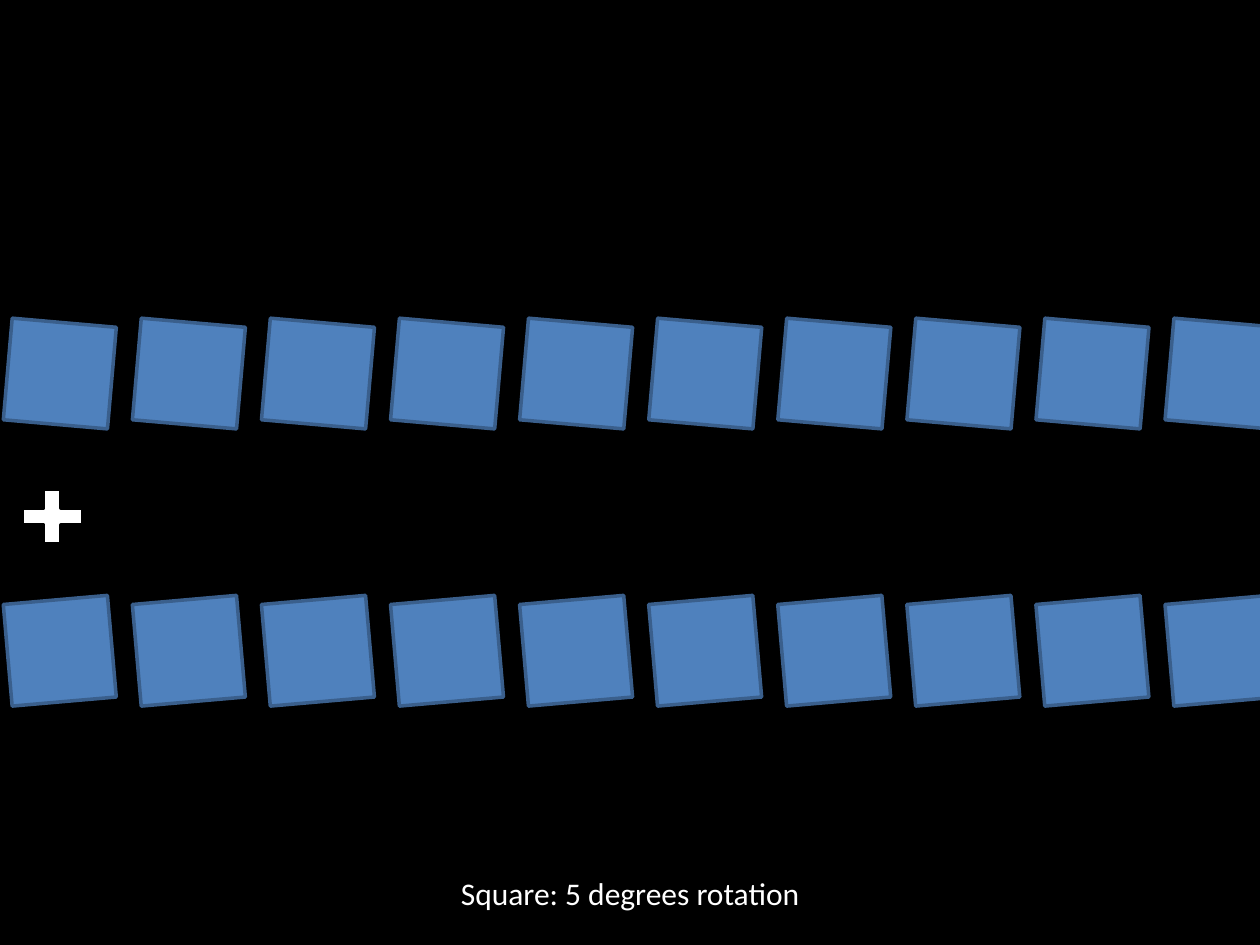
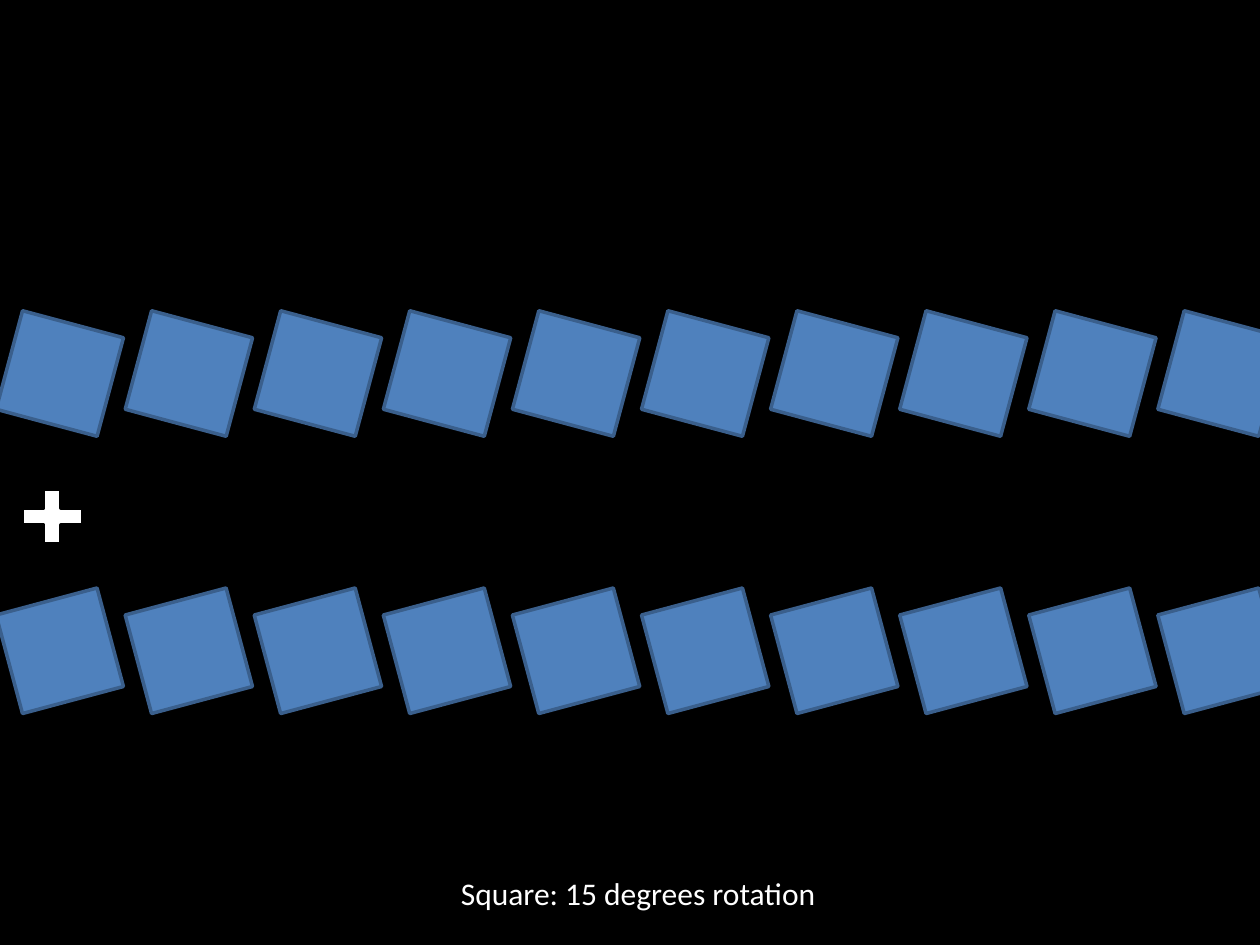
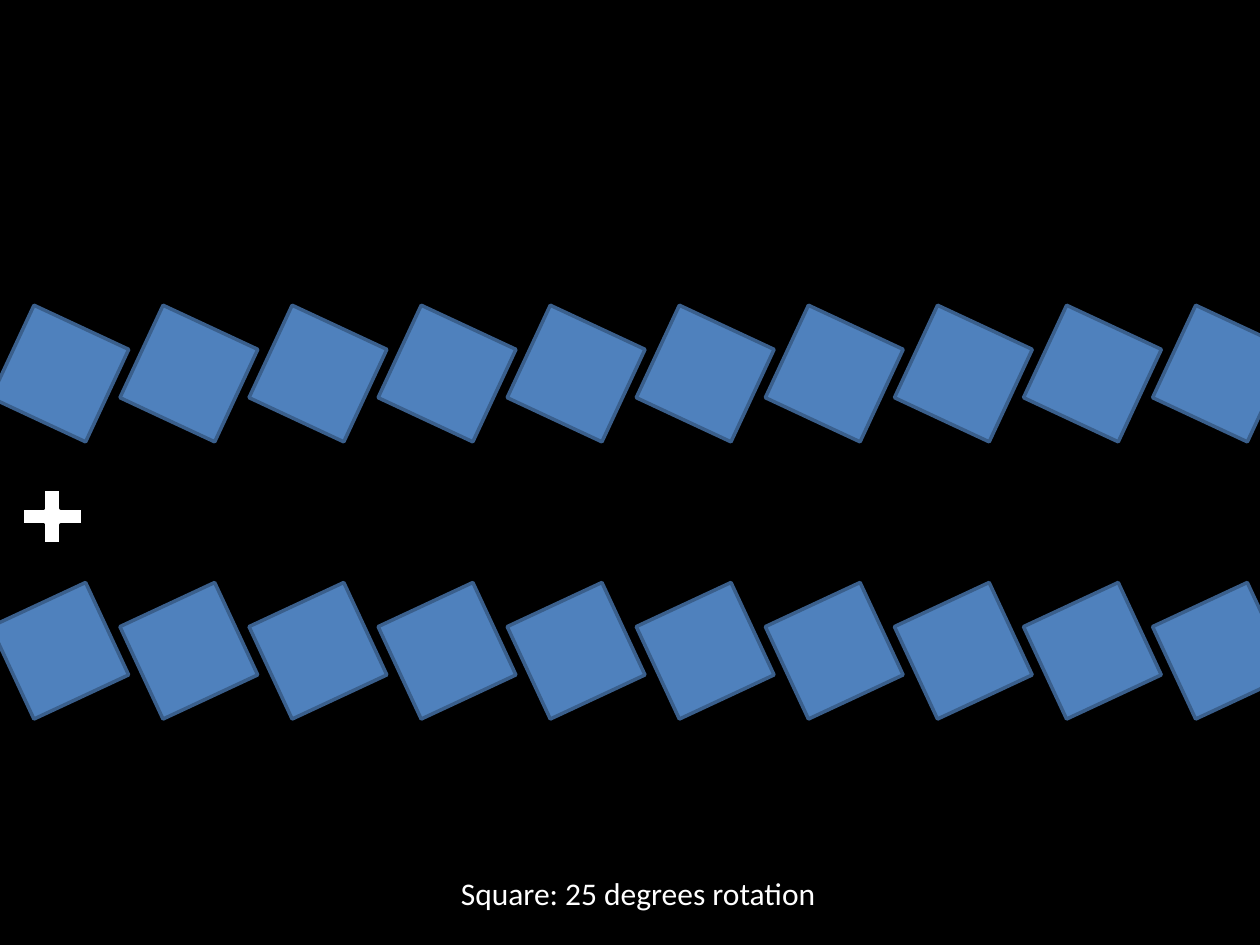
from dataclasses import dataclass

from pptx import Presentation
from pptx.dml.color import RGBColor
from pptx.enum.shapes import MSO_SHAPE
from pptx.enum.text import MSO_AUTO_SIZE
from pptx.shapes.autoshape import Shape
from pptx.slide import Slide
from pptx.util import Inches, Pt

BLACK = "000000"
WHITE = "FFFFFF"
BLUE = "4F81BD"
EDGE = "3A5F8C"
FONT = "Calibri"

COUNT = 10
FIRST = 0.06
LAST = 9.28
STEP = (LAST - FIRST) / (COUNT - 1)


@dataclass
class Row:
    top: float
    sign: int


@dataclass
class Page:
    angle: int
    width: float


UPPER = Row(2.56, 1)
LOWER = Row(4.76, -1)
PAGES = [Page(5, 2.93), Page(15, 3.06), Page(25, 3.06)]


def color(code: str) -> RGBColor:
    return RGBColor.from_string(code)


def add_box(slide: Slide, kind: MSO_SHAPE, left: float, top: float,
            width: float, height: float, fill: str, line: str) -> Shape:
    shape = slide.shapes.add_shape(
        kind, Inches(left), Inches(top), Inches(width), Inches(height))
    shape.shadow.inherit = False
    shape.fill.solid()
    shape.fill.fore_color.rgb = color(fill)
    shape.line.color.rgb = color(line)
    shape.line.width = Pt(2)
    return shape


def add_row(slide: Slide, row: Row, angle: int) -> None:
    for index in range(COUNT):
        square = add_box(slide, MSO_SHAPE.RECTANGLE, FIRST + index * STEP,
                         row.top, 0.83, 0.81, BLUE, EDGE)
        square.rotation = row.sign * angle


def add_label(slide: Slide, page: Page) -> None:
    box = slide.shapes.add_textbox(
        Inches(3.56), Inches(6.89), Inches(page.width), Inches(0.4))
    frame = box.text_frame
    frame.word_wrap = False
    frame.auto_size = MSO_AUTO_SIZE.SHAPE_TO_FIT_TEXT
    frame.text = f"Square: {page.angle} degrees rotation"
    font = frame.paragraphs[0].runs[0].font
    font.name = FONT
    font.size = Pt(18)
    font.color.rgb = color(WHITE)


def add_page(deck: Presentation, page: Page) -> None:
    slide = deck.slides.add_slide(deck.slide_layouts[6])
    back = slide.background.fill
    back.solid()
    back.fore_color.rgb = color(BLACK)
    add_row(slide, UPPER, page.angle)
    add_box(slide, MSO_SHAPE.MATH_PLUS, 0.09, 3.81, 0.65, 0.58, WHITE, BLACK)
    add_label(slide, page)
    add_row(slide, LOWER, page.angle)


def main() -> None:
    deck = Presentation()
    deck.slide_width = Inches(10)
    deck.slide_height = Inches(7.5)
    for page in PAGES:
        add_page(deck, page)
    deck.save("out.pptx")


if __name__ == "__main__":
    main()
